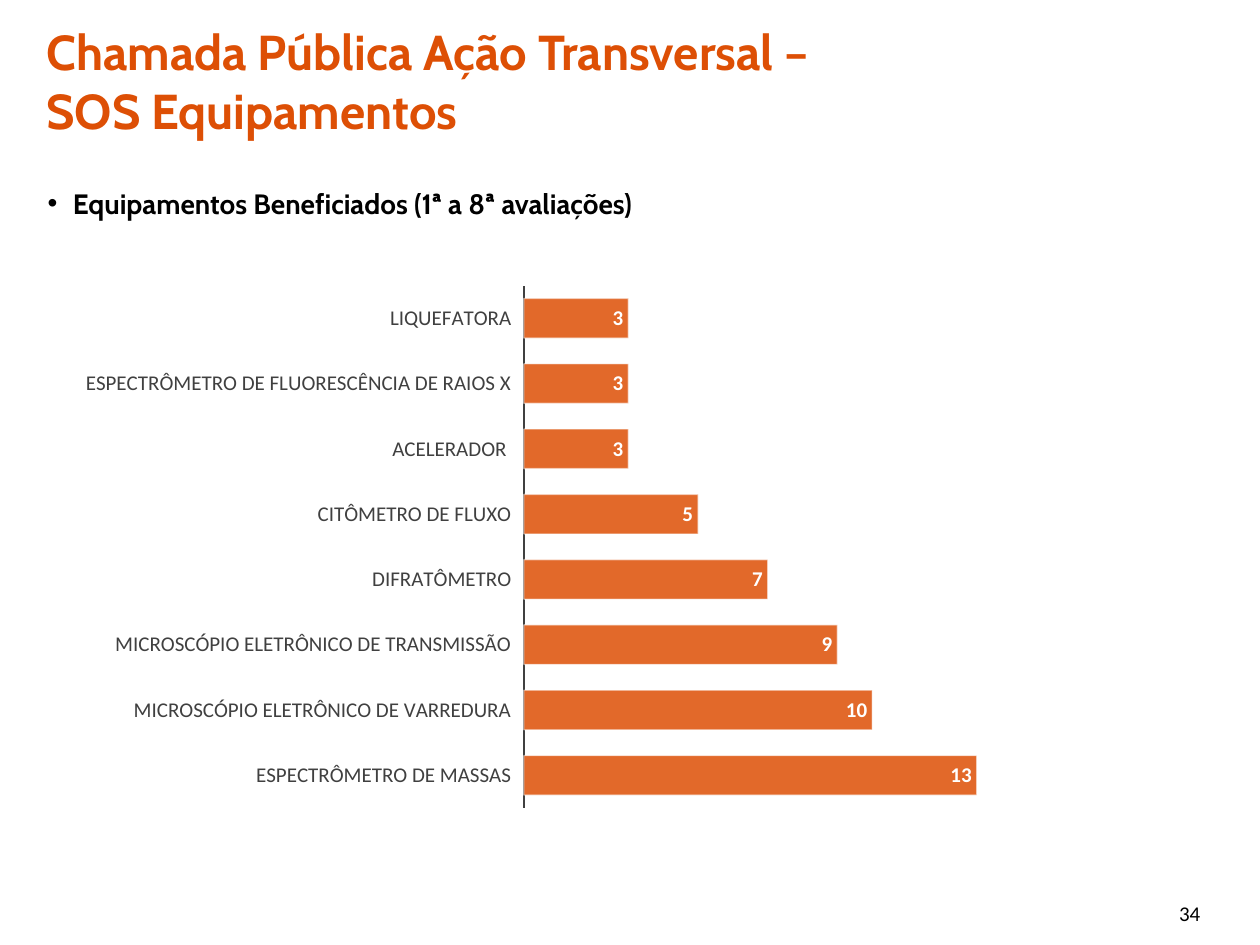
from typing import NamedTuple

from lxml.etree import SubElement as Sub
from pptx import Presentation
from pptx.chart.data import CategoryChartData as ChartData
from pptx.dml.color import RGBColor as Rgb
from pptx.enum.chart import XL_CHART_TYPE as Kind
from pptx.enum.chart import XL_LABEL_POSITION as Spot
from pptx.enum.chart import XL_TICK_LABEL_POSITION as TickPos
from pptx.enum.chart import XL_TICK_MARK as Tick
from pptx.enum.text import MSO_ANCHOR as Anchor
from pptx.enum.text import PP_ALIGN as Align
from pptx.oxml.ns import qn
from pptx.util import Cm, Pt

HUES = {"orange": "DD4F05", "black": "000000", "gray": "404040", "white": "FFFFFF"}


class Label(NamedTuple):
    text: str
    place: tuple[float, float, float, float]
    size: int
    hue: str
    face: str = "Cabin"
    bold: bool = True
    anchor: Anchor = Anchor.TOP
    bullet: bool = False


LABELS = [
    Label("34", (23.52, 18.03, 1.22, 0.76), 12, "black", "Calibri", False),
    Label("Chamada Pública Ação Transversal –\vSOS Equipamentos",
          (0.69, 0.03, 24.71, 3.2), 28, "orange", anchor=Anchor.MIDDLE),
    Label("Equipamentos Beneficiados (1ª a 8ª avaliações)",
          (0.71, 3.25, 23.98, 1.42), 16, "black", bullet=True),
]

COUNTS = {
    "ESPECTRÔMETRO DE MASSAS": 13,
    "MICROSCÓPIO ELETRÔNICO DE VARREDURA": 10,
    "MICROSCÓPIO ELETRÔNICO DE TRANSMISSÃO": 9,
    "DIFRATÔMETRO": 7,
    "CITÔMETRO DE FLUXO": 5,
    "ACELERADOR ": 3,
    "ESPECTRÔMETRO DE FLUORESCÊNCIA DE RAIOS X": 3,
    "LIQUEFATORA": 3,
}
CHART = (1.5, 5.54, 19.28, 10.97)
PLOT = {"x": 0.47, "y": 0.02, "w": 0.51, "h": 0.96}


def style(font, size: int, hue: str, face: str, bold: bool = False) -> None:
    for key, value in {"size": Pt(size), "name": face, "bold": bold}.items():
        setattr(font, key, value)
    font.color.rgb = Rgb.from_string(HUES[hue])


def add_label(slide, label: Label) -> None:
    frame = slide.shapes.add_textbox(*map(Cm, label.place)).text_frame
    frame.word_wrap = True
    frame.vertical_anchor = label.anchor
    para = frame.paragraphs[0]
    para.text = label.text
    if label.bullet:
        props = para._p.get_or_add_pPr()
        props.set("marL", str(Cm(0.51)))
        props.set("indent", str(-Cm(0.51)))
        Sub(props, qn("a:buFont"), typeface="Arial")
        Sub(props, qn("a:buChar"), char="•")
        para.alignment = Align.JUSTIFY
        para.line_spacing = Pt(30)
    for run in para.runs:
        style(run.font, label.size, label.hue, label.face, label.bold)


def tint(fill, hue: str, part: int) -> None:
    """Fill with a colour at the given percentage of opacity."""
    fill.solid()
    fill.fore_color.rgb = Rgb.from_string(HUES[hue])
    node = fill._xPr.find(qn("a:solidFill"))[0]
    Sub(node, qn("a:alpha"), val=str(part * 1000))


def fix_plot(chart) -> None:
    """Pin the inner plot area to fractions of the chart frame."""
    area = chart._chartSpace.chart.plotArea
    for old in area.findall(qn("c:layout")):
        area.remove(old)
    layout = area.makeelement(qn("c:layout"))
    area.insert(0, layout)
    manual = Sub(layout, qn("c:manualLayout"))
    modes = {"layoutTarget": "inner", "xMode": "edge", "yMode": "edge"}
    for tag, value in {**modes, **PLOT}.items():
        Sub(manual, qn(f"c:{tag}"), val=str(value))


def add_bars(slide) -> None:
    data = ChartData()
    data.categories = list(COUNTS)
    data.add_series("Series 1", list(COUNTS.values()))
    chart = slide.shapes.add_chart(Kind.BAR_CLUSTERED, *map(Cm, CHART), data).chart
    chart.has_legend = chart.has_title = False
    style(chart.font, 10, "black", "Calibri")
    fix_plot(chart)

    names, scale = chart.category_axis, chart.value_axis
    names.major_tick_mark = names.minor_tick_mark = Tick.NONE
    names.tick_label_position = TickPos.LOW
    style(names.tick_labels.font, 12, "gray", "Calibri")
    names.format.line.width = Pt(1.5)
    names.format.line.color.rgb = Rgb.from_string(HUES["gray"])
    limits = {"minimum_scale": 0, "maximum_scale": 14,
              "has_major_gridlines": False, "visible": False}
    for key, value in limits.items():
        setattr(scale, key, value)

    plot = chart.plots[0]
    plot.gap_width = 65
    plot.vary_by_categories = False
    bars = plot.series[0]
    tint(bars.format.fill, "orange", 85)
    bars.format.line.width = Pt(0.75)
    tint(bars.format.line.fill, "white", 50)
    marks = bars.data_labels
    marks.show_value = True
    marks.position = Spot.INSIDE_END
    style(marks.font, 12, "white", "Calibri", True)


def main() -> None:
    deck = Presentation()
    deck.slide_width, deck.slide_height = Cm(25.4), Cm(19.05)
    slide = deck.slides.add_slide(deck.slide_layouts[6])
    for label in LABELS:
        add_label(slide, label)
    add_bars(slide)
    deck.save("out.pptx")


if __name__ == "__main__":
    main()
